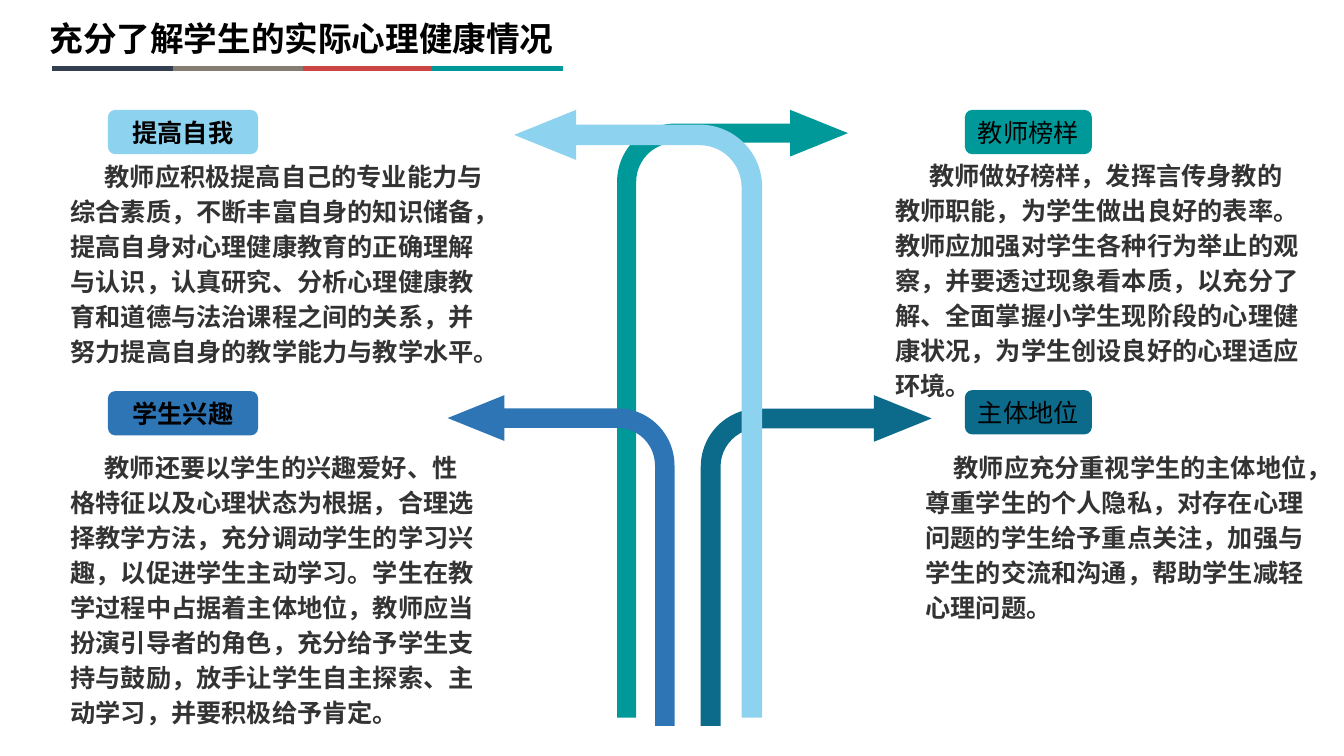
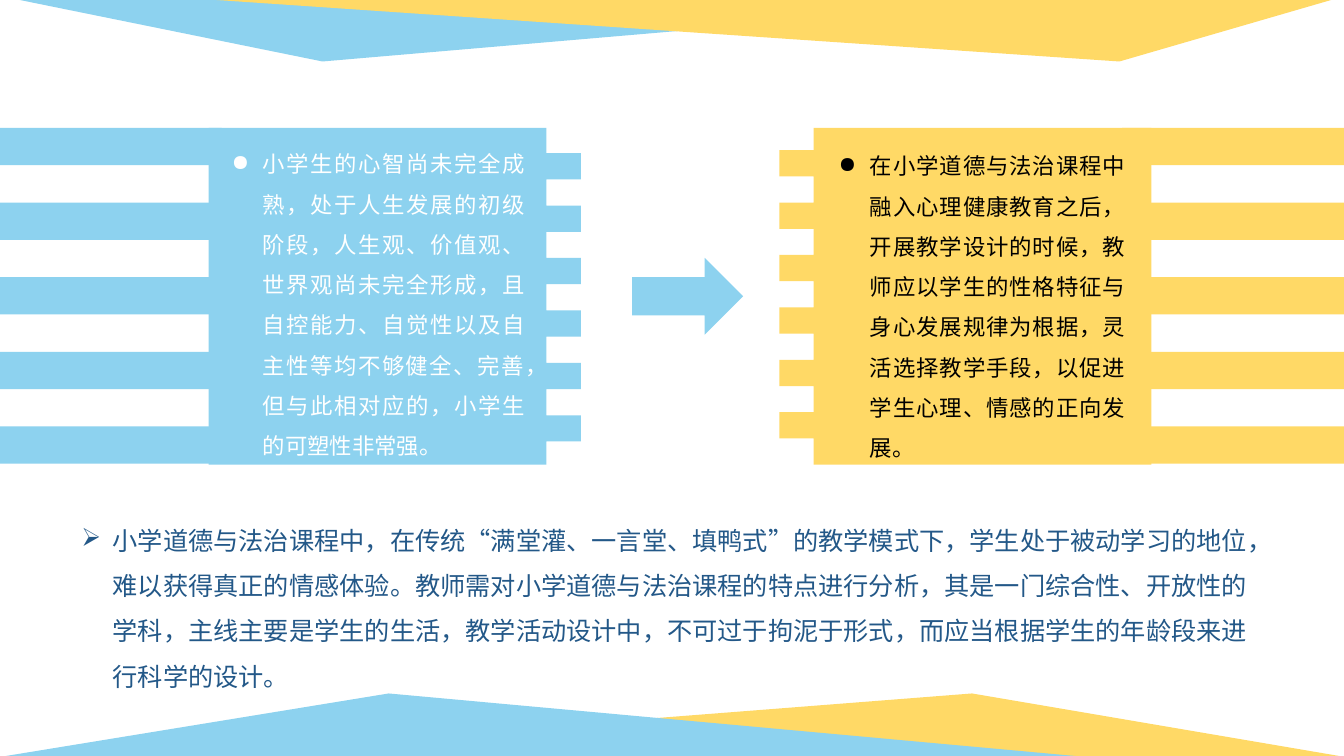
from lxml import etree
from pptx import Presentation
from pptx import util as u
from pptx.dml import color
from pptx.enum import shapes, text
from pptx.oxml import ns

SKY, GOLD, TEAL, NAVY, BLUE = "8DD2EF", "FFD966", "009999", "0C6B8B", "2E75B5"
BLACK, WHITE, GRAY, INK = "000000", "FFFFFF", "333333", "235888"
HAN = "Noto Sans CJK SC"
KIND = shapes.MSO_SHAPE
ALIGN = text.PP_ALIGN


def rgb(code):
    """Turn a hex string into a colour."""
    return color.RGBColor.from_string(code)


def inch(*nums):
    """Turn numbers into lengths."""
    return [u.Inches(n) for n in nums]


def plain(shape, fill):
    """Give a shape a flat fill without line or shadow."""
    shape.shadow.inherit = False
    shape.fill.solid()
    shape.fill.fore_color.rgb = rgb(fill)
    shape.line.fill.background()
    return shape


def block(slide, kind, box, fill, adj=(), turn=0, flip=False):
    """Add a flat preset shape."""
    shape = plain(slide.shapes.add_shape(kind, *inch(*box)), fill)
    for i, val in enumerate(adj):
        shape.adjustments[i] = val
    shape.rotation = turn
    if flip:
        shape._element.spPr.xfrm.set("flipH", "1")
    return shape


def write(para, words, size, ink, bold=False, face=HAN):
    """Add one formatted run to a paragraph."""
    run = para.add_run()
    run.text = words
    font = run.font
    font.size, font.bold, font.name = u.Pt(size), bold, face
    font.color.rgb = rgb(ink)
    east = etree.SubElement(run._r.get_or_add_rPr(), ns.qn("a:ea"))
    east.set("typeface", HAN)


def frame(slide, box):
    """Add a wrapping text box and return its first paragraph."""
    area = slide.shapes.add_textbox(*inch(*box)).text_frame
    area.word_wrap = True
    return area.paragraphs[0]


def indent(para, left, first):
    """Set the left margin and first-line indent."""
    props = para._p.get_or_add_pPr()
    props.set("marL", str(u.Inches(left)))
    props.set("indent", str(u.Inches(first)))
    return props


def bullet(slide, box, mark, words, size, ink, face=HAN, align=ALIGN.LEFT):
    """Add a text box holding one bulleted paragraph."""
    para = frame(slide, box)
    props = indent(para, 0.31, -0.31)
    etree.SubElement(props, ns.qn("a:buChar")).set("char", mark)
    para.line_spacing = 1.5
    para.alignment = align
    write(para, words, size, ink, face=face)


def header(slide, words):
    """Place the title and its four-colour rule."""
    title = slide.shapes.title
    title.left, title.top, title.width, title.height = inch(0.39, 0.13, 5.25, 0.55)
    area = title.text_frame
    area.word_wrap = False
    area.auto_size = text.MSO_AUTO_SIZE.NONE
    area.vertical_anchor = text.MSO_ANCHOR.TOP
    area.paragraphs[0].alignment = ALIGN.LEFT
    write(area.paragraphs[0], words, 24, BLACK, True)
    stops = [0.52, 1.72, 3.01, 4.28, 5.58]
    for start, end, ink in zip(stops, stops[1:], ["333F50", "857D72", "CB4545", TEAL]):
        rule = slide.shapes.add_connector(
            shapes.MSO_CONNECTOR.STRAIGHT, *inch(start, 0.68, end, 0.68))
        rule.line.color.rgb = rgb(ink)
        rule.line.width = u.Pt(3)
        etree.SubElement(rule._element.spPr, ns.qn("a:effectLst"))


def topic(slide, tag, fill, bold, name, box, first, words):
    """Place a label and the paragraph that goes with it."""
    label = block(slide, KIND.ROUNDED_RECTANGLE, tag, fill)
    area = label.text_frame
    area.vertical_anchor = text.MSO_ANCHOR.MIDDLE
    area.paragraphs[0].alignment = ALIGN.CENTER
    write(area.paragraphs[0], name, 18, BLACK, bold)
    para = frame(slide, box)
    indent(para, 0, first)
    para.line_spacing = u.Pt(25)
    write(para, words, 18, GRAY, True)


def comb(slide, left, top, fill, side, gap):
    """Draw a panel with six teeth on one side and five stripes on the other."""
    wide, high, tooth = 3.35, 3.34, 0.34 * side
    edge, back = (left + wide, left) if side > 0 else (left, left + wide)
    points = [(back, top), (edge, top)]
    for i in range(6):
        y = top + gap + 0.52 * i
        points += [(edge, y), (edge + tooth, y),
                   (edge + tooth, y + 0.26), (edge, y + 0.26)]
    points += [(edge, top + high), (back, top + high)]
    dots = [tuple(inch(*p)) for p in points]
    pen = slide.shapes.build_freeform(*dots[0], scale=1.0)
    pen.add_line_segments(dots[1:], close=True)
    plain(pen.convert_to_shape(), fill)
    start = 0 if side > 0 else 11.13
    for i in range(5):
        block(slide, KIND.RECTANGLE, (start, top + 0.74 * i, 2.2, 0.37), fill)


def peaks(slide, top, high, turn, order):
    """Draw a band of two overlapping triangles."""
    for fill, left, wide, tip in order:
        block(slide, KIND.ISOSCELES_TRIANGLE, (left, top, wide, high), fill, [tip], turn)


def paths(prs):
    """Build the slide with four bent arrows and four topics."""
    slide = prs.slides.add_slide(prs.slide_layouts[5])
    header(slide, "充分了解学生的实际心理健康情况")
    for left, top, wide, high, thick, fill, flip in [
            (6.12, 1.09, 2.29, 6.03, 0.083, TEAL, False),
            (6.95, 3.92, 2.29, 3.28, 0.086, NAVY, False),
            (4.44, 3.92, 2.25, 3.28, 0.086, BLUE, True),
            (5.1, 1.09, 2.46, 6.03, 0.083, SKY, True)]:
        block(slide, KIND.BENT_ARROW, (left, top, wide, high), fill,
              [thick, 0.101, 0.25, 0.252], flip=flip)
    topic(slide, (1.07, 1.09, 1.49, 0.44), SKY, True, "提高自我",
          (0.6, 1.5, 4.35, 2.55), 0.34,
          "教师应积极提高自己的专业能力与综合素质，不断丰富自身的知识储备，"
          "提高自身对心理健康教育的正确理解与认识，认真研究、分析心理健康教育"
          "和道德与法治课程之间的关系，并努力提高自身的教学能力与教学水平。")
    topic(slide, (1.07, 3.88, 1.49, 0.44), BLUE, True, "学生兴趣",
          (0.6, 4.39, 4.22, 2.9), 0.34,
          "教师还要以学生的兴趣爱好、性格特征以及心理状态为根据，合理选择教学方法，"
          "充分调动学生的学习兴趣，以促进学生主动学习。学生在教学过程中占据着主体地位，"
          "教师应当扮演引导者的角色，充分给予学生支持与鼓励，放手让学生自主探索、"
          "主动学习，并要积极给予肯定。")
    topic(slide, (9.57, 1.09, 1.26, 0.44), TEAL, False, "教师榜样",
          (8.78, 1.49, 4.27, 2.55), 0.34,
          "教师做好榜样，发挥言传身教的教师职能，为学生做出良好的表率。"
          "教师应加强对学生各种行为举止的观察，并要透过现象看本质，以充分了解、"
          "全面掌握小学生现阶段的心理健康状况，为学生创设良好的心理适应环境。")
    topic(slide, (9.57, 3.87, 1.26, 0.44), NAVY, False, "主体地位",
          (9.08, 4.39, 3.98, 1.85), 0.28,
          "教师应充分重视学生的主体地位，尊重学生的个人隐私，对存在心理问题的学生"
          "给予重点关注，加强与学生的交流和沟通，帮助学生减轻心理问题。")


def shift(prs):
    """Build the slide with two combs and a closing note."""
    slide = prs.slides.add_slide(prs.slide_layouts[6])
    comb(slide, 2.07, 1.27, SKY, 1, 0.25)
    comb(slide, 8.07, 1.27, GOLD, -1, 0.22)
    bullet(slide, (2.2, 1.31, 3.11, 3.28), "●",
           "小学生的心智尚未完全成熟，处于人生发展的初级阶段，人生观、价值观、"
           "世界观尚未完全形成，且自控能力、自觉性以及自主性等均不够健全、完善，"
           "但与此相对应的，小学生的可塑性非常强。", 16, WHITE, align=ALIGN.JUSTIFY)
    block(slide, KIND.RIGHT_ARROW, (6.27, 2.56, 1.1, 0.76), SKY)
    bullet(slide, (8.22, 1.33, 3.04, 3.29), "●",
           "在小学道德与法治课程中融入心理健康教育之后，开展教学设计的时候，"
           "教师应以学生的性格特征与身心发展规律为根据，灵活选择教学手段，"
           "以促进学生心理、情感的正向发展。", 16, BLACK, "Calibri", ALIGN.JUSTIFY)
    peaks(slide, -0.04, 0.65, 180, [(SKY, 0, 10.77, 0.703), (GOLD, 1.56, 11.78, 0.19)])
    peaks(slide, 6.88, 0.63, 0, [(GOLD, 1.56, 11.78, 0.686), (SKY, 0, 10.77, 0.358)])
    bullet(slide, (0.71, 5.01, 11.98, 1.86), "➢",
           "小学道德与法治课程中，在传统“满堂灌、一言堂、填鸭式”的教学模式下，"
           "学生处于被动学习的地位，难以获得真正的情感体验。教师需对小学道德与法治课程的"
           "特点进行分析，其是一门综合性、开放性的学科，主线主要是学生的生活，"
           "教学活动设计中，不可过于拘泥于形式，而应当根据学生的年龄段来进行科学的设计。",
           18, INK, "Karla")


def main():
    """Build and save the deck."""
    prs = Presentation()
    prs.slide_width, prs.slide_height = inch(13.33, 7.5)
    paths(prs)
    shift(prs)
    prs.save("out.pptx")


if __name__ == "__main__":
    main()
